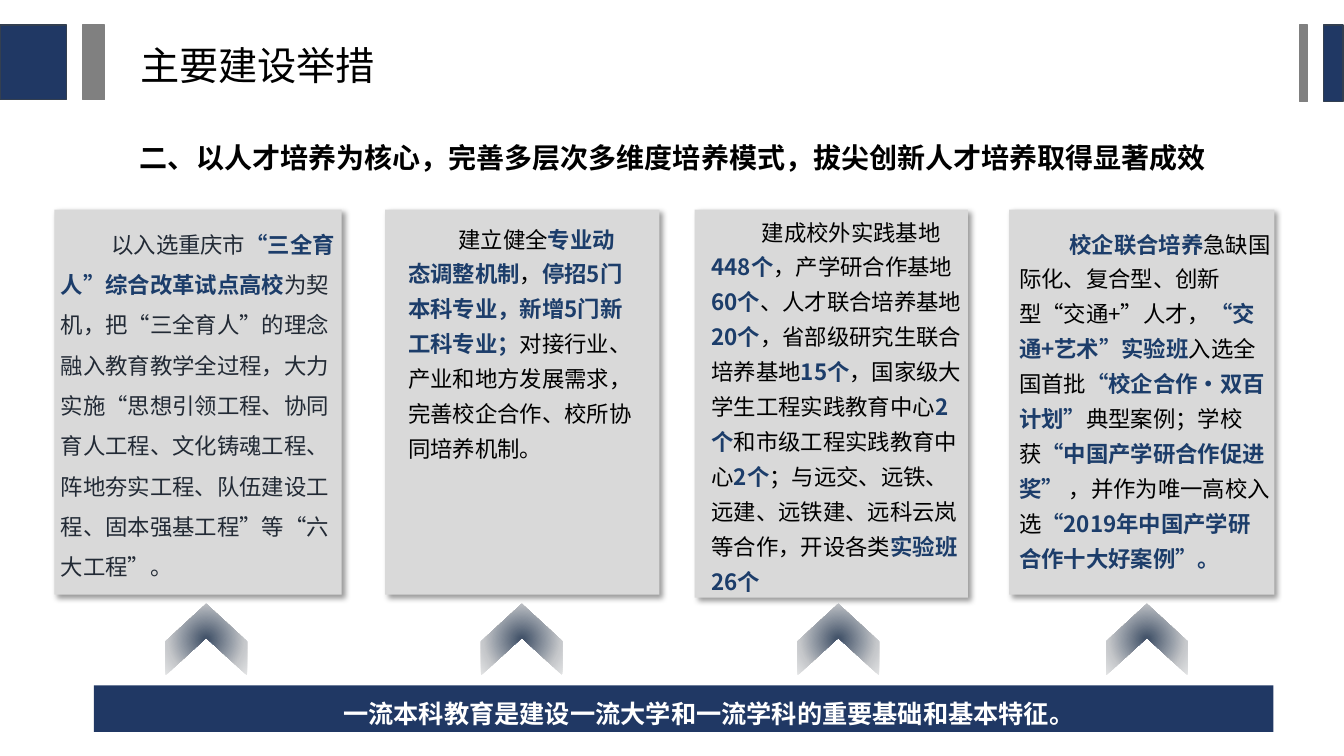
from dataclasses import dataclass

from lxml import etree
from pptx import Presentation
from pptx.dml.color import RGBColor
from pptx.enum.shapes import MSO_SHAPE
from pptx.enum.text import MSO_ANCHOR, PP_ALIGN
from pptx.oxml import parse_xml
from pptx.oxml.ns import nsdecls, qn
from pptx.shapes.autoshape import Shape
from pptx.slide import Slide
from pptx.text.text import TextFrame
from pptx.util import Inches, Pt

FONT = "Noto Sans CJK SC"
WIDTH, HEIGHT = Inches(13.33), Inches(7.5)
NAVY, GRAY, EDGE = "203864", "808080", "333F50"
BLACK, WHITE, PANEL = "000000", "FFFFFF", "D9D9D9"
INK, ACCENT = "222A35", "1C3D6A"
FADE = ((4, "44546A"), (71, "C6C8CB"), (100, "E3E4E5"))


@dataclass(frozen=True)
class Area:
    """A rectangle in hundredths of the slide's width and height."""
    left: float
    top: float
    width: float
    height: float

    def emu(self) -> tuple[int, int, int, int]:
        return (round(self.left * WIDTH / 100), round(self.top * HEIGHT / 100),
                round(self.width * WIDTH / 100), round(self.height * HEIGHT / 100))


@dataclass(frozen=True)
class Block:
    area: Area
    fill: str
    edge: str


@dataclass(frozen=True)
class Heading:
    area: Area
    words: str
    size: int
    bold: bool


@dataclass(frozen=True)
class Measure:
    panel: Area
    body: Area
    arrow_left: float
    words: str
    color: str = BLACK
    spacing: float = 1.3


BLOCKS = (
    Block(Area(98.5, 3.33, 1.43, 10.13), NAVY, EDGE),
    Block(Area(0, 3.33, 4.95, 9.87), NAVY, EDGE),
    Block(Area(96.7, 3.33, 0.6, 10.13), GRAY, GRAY),
    Block(Area(6.15, 3.33, 1.65, 9.87), GRAY, GRAY),
)
HEADINGS = (
    Heading(Area(9.68, 4.8, 19.2, 7.6), "主要建设举措", 28, False),
    Heading(Area(9.68, 17.87, 83.95, 5.87),
            "二、以人才培养为核心，完善多层次多维度培养模式，拔尖创新人才培养取得显著成效", 20, True),
)
MEASURES = (
    Measure(Area(4.05, 27.73, 21.38, 50.93), Area(3.8, 28.13, 22.5, 49.2), 12.68,
            "以入选重庆市**“三全育人”综合改革试点高校**为契机，把“三全育人”的理念融入教育教学全过程，"
            "大力实施“思想引领工程、协同育人工程、文化铸魂工程、阵地夯实工程、队伍建设工程、"
            "固本强基工程”等“六大工程”。", INK, 1.5),
    Measure(Area(28.66, 27.73, 20.41, 50.93), Area(29.63, 28.13, 18.38, 33.33), 36.16,
            "建立健全**专业动态调整机制**，**停招5门本科专业，新增5门新工科专业；**"
            "对接行业、产业和地方发展需求，完善校企合作、校所协同培养机制。"),
    Measure(Area(51.69, 27.73, 20.33, 51.33), Area(52.21, 27.2, 20.41, 50.93), 59.71,
            "建成校外实践基地**448个**，产学研合作基地**60个**、人才联合培养基地**20个**，"
            "省部级研究生联合培养基地**15个**，国家级大学生工程实践教育中心**2个**和市级工程实践教育中心"
            "**2个**；与远交、远铁、远建、远铁建、远科云岚等合作，开设各类**实验班26个**"),
    Measure(Area(75.09, 27.73, 19.73, 50.93), Area(75.09, 28.8, 20.33, 47.2), 82.67,
            "**校企联合培养**急缺国际化、复合型、创新型“交通+”人才，**“交通+艺术”实验班**入选全国首批"
            "**“校企合作·双百计划”**典型案例；学校获**“中国产学研合作促进奖”** ，并作为唯一高校入选"
            "**“2019年中国产学研合作十大好案例”。**"),
)
CONCLUSION = "一流本科教育是建设一流大学和一流学科的重要基础和基本特征。"


def rgb(color: str) -> RGBColor:
    return RGBColor.from_string(color)


def add_block(slide: Slide, area: Area, fill: str, edge: str | None = None,
              kind: MSO_SHAPE = MSO_SHAPE.RECTANGLE) -> Shape:
    block = slide.shapes.add_shape(kind, *area.emu())
    block.shadow.inherit = False
    block.fill.solid()
    block.fill.fore_color.rgb = rgb(fill)
    if edge:
        block.line.color.rgb = rgb(edge)
        block.line.width = Pt(1)
    else:
        block.line.fill.background()
    return block


def write(frame: TextFrame, words: str, size: int, color: str, bold: bool = False,
          spacing: float | None = None, indent: float = 0) -> None:
    frame.word_wrap = True
    paragraph = frame.paragraphs[0]
    paragraph.line_spacing = spacing
    if indent:
        properties = paragraph._p.get_or_add_pPr()
        properties.set("marL", "0")
        properties.set("indent", str(Inches(indent)))
    paragraph.font.size = Pt(size)
    paragraph.font.name = FONT
    defaults = paragraph._p.pPr.find(qn("a:defRPr"))
    etree.SubElement(defaults, qn("a:ea")).set("typeface", FONT)
    pieces = words.split("**")
    if len(pieces) == 1:
        paragraph.font.bold = bold
        paragraph.font.color.rgb = rgb(color)
    for position, piece in enumerate(pieces):
        if piece:
            run = paragraph.add_run()
            run.text = piece
            if len(pieces) > 1:
                emphasised = position % 2 == 1
                run.font.bold = emphasised
                run.font.color.rgb = rgb(ACCENT if emphasised else color)


def add_words(slide: Slide, area: Area) -> TextFrame:
    return slide.shapes.add_textbox(*area.emu()).text_frame


def cast_shadow(panel: Shape) -> None:
    panel._element.spPr.find(qn("a:effectLst")).append(parse_xml(
        f'<a:outerShdw {nsdecls("a")} blurRad="{Pt(4)}" dist="{Pt(3)}" dir="2700000" '
        'algn="tl" rotWithShape="0"><a:srgbClr val="000000"><a:alpha val="40000"/>'
        '</a:srgbClr></a:outerShdw>'))


def add_arrow(slide: Slide, left: float) -> None:
    arrow = add_block(slide, Area(left, 79.2, 5.33, 10.8), FADE[0][1], kind=MSO_SHAPE.CHEVRON)
    arrow.adjustments[0] = 0.525
    arrow.rotation = 270
    stops = "".join(f'<a:gs pos="{share * 1000}"><a:srgbClr val="{color}"/></a:gs>'
                    for share, color in FADE)
    properties = arrow._element.spPr
    properties.replace(properties.find(qn("a:solidFill")), parse_xml(
        f'<a:gradFill {nsdecls("a")} rotWithShape="1"><a:gsLst>{stops}</a:gsLst>'
        '<a:path path="circle"><a:fillToRect l="50000" t="50000" r="50000" b="50000"/>'
        '</a:path></a:gradFill>'))


def add_measure(slide: Slide, measure: Measure) -> None:
    cast_shadow(add_block(slide, measure.panel, PANEL))
    write(add_words(slide, measure.body), measure.words, 16, measure.color,
          spacing=measure.spacing, indent=0.5)
    add_arrow(slide, measure.arrow_left)


def add_conclusion(slide: Slide) -> None:
    frame = add_block(slide, Area(6.98, 90.67, 87.77, 6.13), NAVY).text_frame
    frame.vertical_anchor = MSO_ANCHOR.MIDDLE
    frame.paragraphs[0].alignment = PP_ALIGN.CENTER
    write(frame, CONCLUSION, 18, WHITE, bold=True, spacing=1.3, indent=0.5)


def main() -> None:
    deck = Presentation()
    deck.slide_width, deck.slide_height = WIDTH, HEIGHT
    slide = deck.slides.add_slide(deck.slide_layouts[6])
    for block in BLOCKS:
        add_block(slide, block.area, block.fill, block.edge)
    for heading in HEADINGS:
        write(add_words(slide, heading.area), heading.words, heading.size, BLACK, heading.bold)
    add_conclusion(slide)
    for measure in MEASURES:
        add_measure(slide, measure)
    deck.save("out.pptx")


if __name__ == "__main__":
    main()
